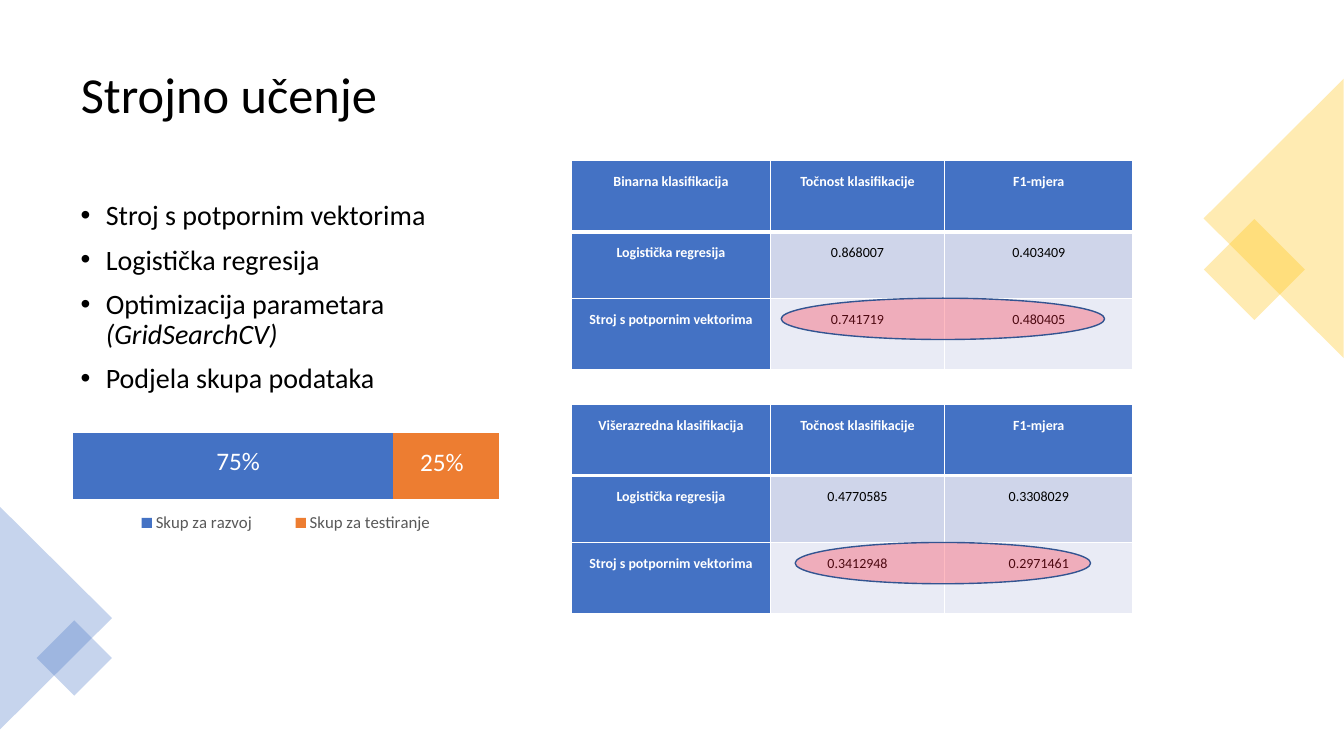
from lxml import etree
from pptx import Presentation
from pptx.chart.data import CategoryChartData
from pptx.dml.color import RGBColor
from pptx.enum.chart import XL_CHART_TYPE, XL_LEGEND_POSITION
from pptx.enum.shapes import MSO_SHAPE
from pptx.enum.text import MSO_ANCHOR, PP_ALIGN
from pptx.oxml import parse_xml
from pptx.oxml.ns import nsdecls, qn
from pptx.util import Pt

BLACK = RGBColor(0x00, 0x00, 0x00)
WHITE = RGBColor(0xFF, 0xFF, 0xFF)
GRAY = RGBColor(0x59, 0x59, 0x59)
BLUE = RGBColor(0x44, 0x72, 0xC4)
NAVY = RGBColor(0x32, 0x54, 0x91)
ORANGE = RGBColor(0xED, 0x7D, 0x31)
YELLOW = RGBColor(0xFF, 0xC0, 0x00)
RED = RGBColor(0xFF, 0x1E, 0x38)
BAND_DARK = RGBColor(0xCF, 0xD5, 0xEA)
BAND_LIGHT = RGBColor(0xE9, 0xEB, 0xF5)


def points(*lengths):
    return [Pt(length) for length in lengths]


class SlideBuilder:
    font_name = "Calibri"

    def __init__(self, slide):
        self.slide = slide
        self.shapes = slide.shapes

    def set_font(self, font, size, color, **extra):
        values = {"name": self.font_name, "size": Pt(size), **extra}
        for name, value in values.items():
            setattr(font, name, value)
        font.color.rgb = color

    def add_run(self, paragraph, text, size, color, **extra):
        run = paragraph.add_run()
        run.text = text
        self.set_font(run.font, size, color, **extra)

    def title(self, text, box):
        title = self.shapes.title
        title.left, title.top, title.width, title.height = points(*box)
        title.text_frame.vertical_anchor = MSO_ANCHOR.MIDDLE
        paragraph = title.text_frame.paragraphs[0]
        paragraph.alignment = PP_ALIGN.LEFT
        paragraph.line_spacing = 0.9
        self.add_run(paragraph, text, 36, BLACK)

    def text_frame(self, box):
        frame = self.shapes.add_textbox(*points(*box)).text_frame
        frame.word_wrap = True
        return frame

    def label(self, text, box):
        self.add_run(self.text_frame(box).paragraphs[0], text, 18, WHITE)

    def bullets(self, items, box):
        """Each item is a list of (text, italic) pairs."""
        frame = self.text_frame(box)
        for index, item in enumerate(items):
            paragraph = frame.add_paragraph() if index else frame.paragraphs[0]
            paragraph.line_spacing = 0.9
            paragraph.space_before = Pt(10)
            properties = paragraph._p.get_or_add_pPr()
            properties.set("marL", str(Pt(18)))
            properties.set("indent", str(Pt(-18)))
            etree.SubElement(properties, qn("a:buFont")).set("typeface", "Arial")
            etree.SubElement(properties, qn("a:buChar")).set("char", "•")
            for text, italic in item:
                self.add_run(paragraph, text, 20, BLACK, italic=italic)

    def tinted_shape(self, kind, box, color, rotation=0, line=None):
        """Draw a shape with a 30 % opaque fill."""
        shape = self.shapes.add_shape(kind, *points(*box))
        shape.shadow.inherit = False
        shape.rotation = rotation
        shape.fill.solid()
        shape.fill.fore_color.rgb = color
        fill_color = shape._element.spPr.find(qn("a:solidFill"))[0]
        etree.SubElement(fill_color, qn("a:alpha")).set("val", "30000")
        if line is None:
            shape.line.fill.background()
        else:
            shape.line.color.rgb = line
            shape.line.width = Pt(1)

    def cell_borders(self, cell, widths):
        properties = cell._tc.get_or_add_tcPr()
        for position, (side, width) in enumerate(widths.items()):
            properties.insert(position, parse_xml(
                f'<a:{side} {nsdecls("a")} w="{Pt(width)}"><a:solidFill>'
                f'<a:srgbClr val="{WHITE}"/></a:solidFill></a:{side}>'))

    def table(self, rows, left, top, column_widths, row_heights):
        box = points(left, top, sum(column_widths), sum(row_heights))
        table = self.shapes.add_table(len(rows), len(rows[0]), *box).table
        for column, width in zip(table.columns, column_widths):
            column.width = Pt(width)
        for row, height in zip(table.rows, row_heights):
            row.height = Pt(height)
        for row_index, values in enumerate(rows):
            for column_index, value in enumerate(values):
                cell = table.cell(row_index, column_index)
                heading = row_index == 0 or column_index == 0
                band = BAND_DARK if row_index % 2 else BAND_LIGHT
                cell.fill.solid()
                cell.fill.fore_color.rgb = BLUE if heading else band
                for side in ("left", "right", "top", "bottom"):
                    setattr(cell, f"margin_{side}", Pt(3))
                self.cell_borders(cell, {
                    "lnL": 1, "lnR": 1,
                    "lnT": 3 if row_index == 1 else 1,
                    "lnB": 3 if row_index == 0 else 1})
                paragraph = cell.text_frame.paragraphs[0]
                paragraph.alignment = PP_ALIGN.CENTER
                paragraph.line_spacing = 1.5
                self.add_run(paragraph, value, 10,
                             WHITE if heading else BLACK, bold=heading)

    def place_chart_part(self, part, x, y, w, h, inner=False):
        """Fix a chart part's place, in fractions of the chart."""
        for old_layout in part.findall(qn("c:layout")):
            part.remove(old_layout)
        target = '<c:layoutTarget val="inner"/>' if inner else ""
        modes = '<c:xMode val="edge"/><c:yMode val="edge"/>'
        sizes = "".join(f'<c:{name} val="{value}"/>' for name, value
                        in {"x": x, "y": y, "w": w, "h": h}.items())
        layout = parse_xml(f'<c:layout {nsdecls("c")}><c:manualLayout>{target}'
                           f'{modes}{sizes}</c:manualLayout></c:layout>')
        part.insert(0 if inner else 1, layout)

    def split_chart(self, series, box):
        """Each series is a (name, value, color) triple."""
        data = CategoryChartData()
        data.categories = ["1"]
        for name, value, color in series:
            data.add_series(name, [value])
        chart = self.shapes.add_chart(
            XL_CHART_TYPE.BAR_STACKED_100, *points(*box), data).chart
        self.set_font(chart.font, 10, BLACK)
        chart.has_title = False
        for axis in (chart.category_axis, chart.value_axis):
            axis.visible = False
            axis.has_major_gridlines = False
        plot = chart.plots[0]
        for name, value in {"gap_width": 150, "overlap": 100,
                            "vary_by_categories": False}.items():
            setattr(plot, name, value)
        for chart_series, (name, value, color) in zip(plot.series, series):
            chart_series.format.fill.solid()
            chart_series.format.fill.fore_color.rgb = color
        chart.has_legend = True
        legend = chart.legend
        legend.position = XL_LEGEND_POSITION.BOTTOM
        legend.include_in_layout = False
        self.set_font(legend.font, 12, GRAY)
        plot_area = chart._chartSpace.chart.plotArea
        self.place_chart_part(plot_area, 0.02, 0.03, 0.96, 0.78, inner=True)
        self.place_chart_part(legend._element, 0.09, 0.62, 0.82, 0.14)


def main():
    presentation = Presentation()
    presentation.slide_width, presentation.slide_height = points(960, 540)
    builder = SlideBuilder(
        presentation.slides.add_slide(presentation.slide_layouts[5]))

    builder.title("Strojno učenje", (50.5, 25, 859, 89.5))
    builder.bullets([
        [("Stroj s potpornim vektorima", False)],
        [("Logistička regresija", False)],
        [("Optimizacija parametara ", False), ("(GridSearchCV)", True)],
        [("Podjela skupa podataka", False)],
    ], (50.5, 140.5, 329, 214.5))

    square, triangle = MSO_SHAPE.RECTANGLE, MSO_SHAPE.ISOSCELES_TRIANGLE
    for kind, box, color, rotation in [
        (square, (870.5, 167, 51, 51), YELLOW, 45),
        (triangle, (810, 106, 199.5, 100), YELLOW, 270),
        (triangle, (-39.5, 401.5, 159, 80), BLUE, 90),
        (square, (34, 451, 38, 38), BLUE, 45),
    ]:
        builder.tinted_shape(kind, box, color, rotation)

    for top, name, logistic, vector in [
        (114.5, "Binarna klasifikacija",
         ("0.868007", "0.403409"), ("0.741719", "0.480405")),
        (288.75, "Višerazredna klasifikacija",
         ("0.4770585", "0.3308029"), ("0.3412948", "0.2971461")),
    ]:
        builder.table([
            (name, "Točnost klasifikacije", "F1-mjera"),
            ("Logistička regresija", *logistic),
            ("Stroj s potpornim vektorima", *vector),
        ], 408.25, top, (142, 124.5, 134.5), (51, 47.5, 51))

    for box in [(558, 213, 231, 29.5), (568, 387.5, 211, 29.5)]:
        builder.tinted_shape(MSO_SHAPE.OVAL, box, RED, line=NAVY)

    builder.split_chart([("Skup za razvoj", 75, BLUE),
                         ("Skup za testiranje", 25, ORANGE)],
                        (45.5, 270, 317.5, 150))
    builder.label("75%", (147.5, 314.5, 48, 29))
    builder.label("25%", (293, 315.5, 48, 29))
    presentation.save("out.pptx")


if __name__ == "__main__":
    main()
